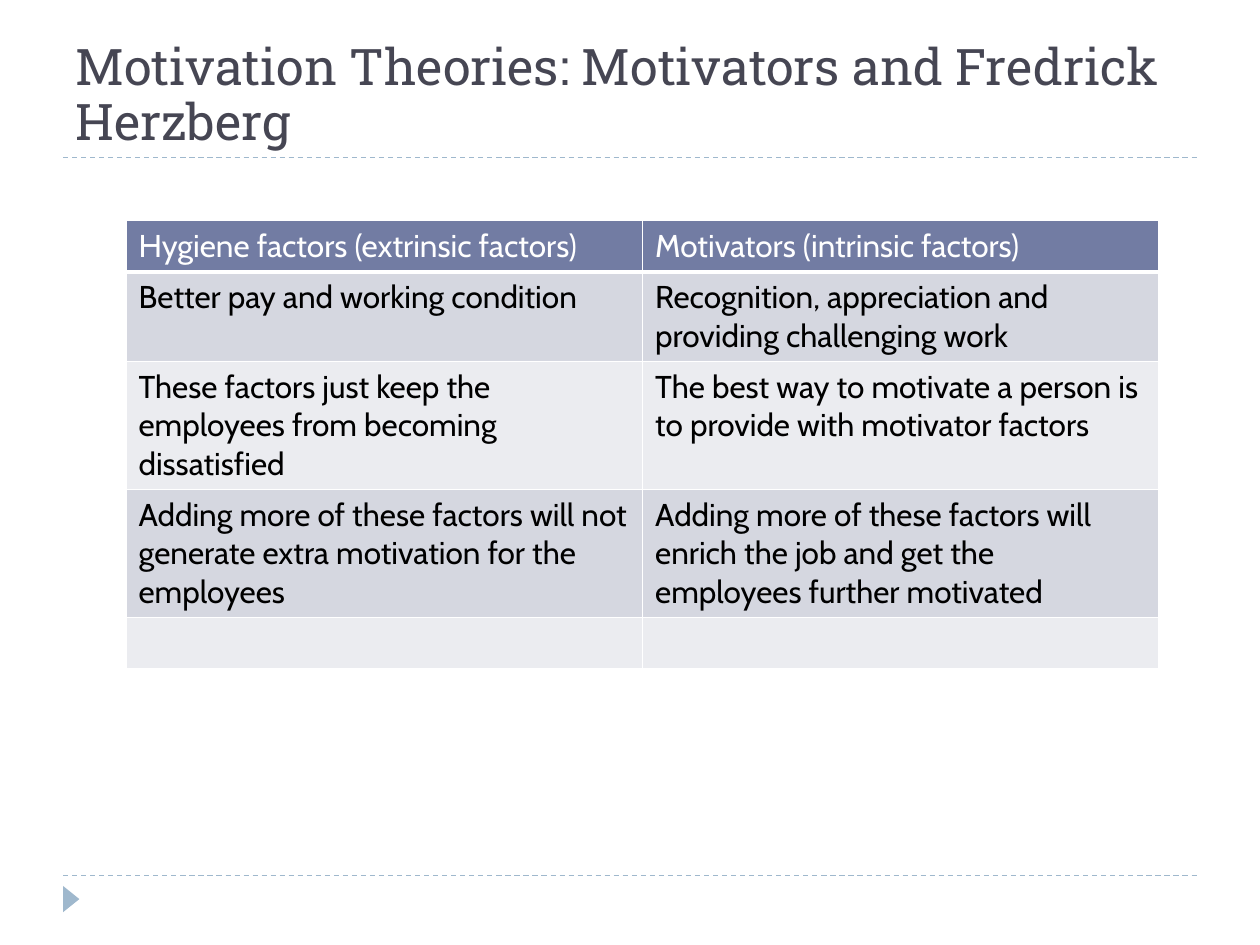
from dataclasses import dataclass

from lxml.etree import SubElement
from pptx import Presentation
from pptx.dml.color import RGBColor
from pptx.enum.dml import MSO_LINE
from pptx.enum.shapes import MSO_CONNECTOR, MSO_SHAPE
from pptx.enum.text import MSO_ANCHOR, MSO_AUTO_SIZE, PP_ALIGN
from pptx.oxml.ns import qn
from pptx.util import Cm, Pt


@dataclass(frozen=True)
class Theme:
    ink: str = "464653"
    rule: str = "9FB8CD"
    head: str = "727CA3"
    odd: str = "D5D7E0"
    even: str = "EBECF0"
    white: str = "FFFFFF"
    black: str = "000000"
    serif: str = "Roboto Slab"
    sans: str = "Cabin"
    large: float = 28.8
    small: float = 18


def color(code):
    return RGBColor.from_string(code)


def write(frame, text, *, font, size, fill, space=None):
    para = frame.paragraphs[0]
    para.alignment = PP_ALIGN.LEFT
    para.line_spacing = space
    run = para.add_run()
    run.text = text
    run.font.name = font
    run.font.size = Pt(size)
    run.font.color.rgb = color(fill)


def border(cell, tint, low):
    props = cell._tc.get_or_add_tcPr()
    for side, wide in (("L", 1), ("R", 1), ("T", 1), ("B", low)):
        line = SubElement(props, qn(f"a:ln{side}"), w=str(Pt(wide)))
        solid = SubElement(line, qn("a:solidFill"))
        SubElement(solid, qn("a:srgbClr"), val=tint)


class Page:
    def __init__(self, deck, theme):
        self.theme = theme
        self.slide = deck.slides.add_slide(deck.slide_layouts[5])
        self.shapes = self.slide.shapes

    def title(self, text, left, top, width, height):
        box = self.shapes.title
        box.left, box.top = Cm(left), Cm(top)
        box.width, box.height = Cm(width), Cm(height)
        frame = box.text_frame
        frame.word_wrap = True
        frame.auto_size = MSO_AUTO_SIZE.NONE
        frame.vertical_anchor = MSO_ANCHOR.BOTTOM
        write(frame, text, font=self.theme.serif, size=self.theme.large,
              fill=self.theme.ink, space=0.9)

    def rule(self, left, right, top):
        line = self.shapes.add_connector(
            MSO_CONNECTOR.STRAIGHT, Cm(left), Cm(top), Cm(right), Cm(top))
        line.line.color.rgb = color(self.theme.rule)
        line.line.width = Pt(0.75)
        line.line.dash_style = MSO_LINE.DASH
        SubElement(line._element.spPr, qn("a:effectLst"))

    def arrow(self, left, top, width, height):
        mark = self.shapes.add_shape(
            MSO_SHAPE.ISOSCELES_TRIANGLE,
            Cm(left), Cm(top), Cm(width), Cm(height))
        mark.rotation = 90
        mark.shadow.inherit = False
        mark.fill.solid()
        mark.fill.fore_color.rgb = color(self.theme.rule)
        mark.line.fill.background()

    def table(self, rows, highs, left, top, width):
        theme = self.theme
        count = len(rows[0])
        grid = self.shapes.add_table(
            len(rows), count, Cm(left), Cm(top), Cm(width),
            Cm(sum(highs))).table
        for col in grid.columns:
            col.width = Cm(width / count)
        for i, (row, high) in enumerate(zip(rows, highs)):
            grid.rows[i].height = Cm(high)
            first = i == 0
            back = theme.head if first else (theme.even, theme.odd)[i % 2]
            for j, text in enumerate(row):
                cell = grid.cell(i, j)
                border(cell, theme.white, 3 if first else 1)
                cell.fill.solid()
                cell.fill.fore_color.rgb = color(back)
                if text:
                    write(cell.text_frame, text, font=theme.sans,
                          size=theme.small,
                          fill=theme.white if first else theme.black)


def main():
    deck = Presentation()
    deck.slide_width, deck.slide_height = Cm(25.4), Cm(19.05)
    page = Page(deck, Theme())
    for top in (17.65, 3.17):
        page.rule(1.27, 24.13, top)
    page.arrow(1.17, 17.96, 0.53, 0.33)
    page.title("Motivation Theories: Motivators and Fredrick Herzberg",
               1.27, 0.43, 22.86, 2.74)
    rows = [
        ("Hygiene factors (extrinsic factors)",
         "Motivators (intrinsic factors)"),
        ("Better pay and working condition",
         "Recognition, appreciation and providing challenging work"),
        ("These factors just keep the employees from becoming dissatisfied",
         "The best way to motivate a person is to provide with motivator "
         "factors"),
        ("Adding more of these factors will not generate extra motivation "
         "for the employees",
         "Adding more of these factors will enrich the job and get the "
         "employees further motivated"),
        ("", ""),
    ]
    page.table(rows, (1.02, 1.8, 2.58, 2.58, 1.02), 2.54, 4.45, 20.83)
    deck.save("out.pptx")


if __name__ == "__main__":
    main()
